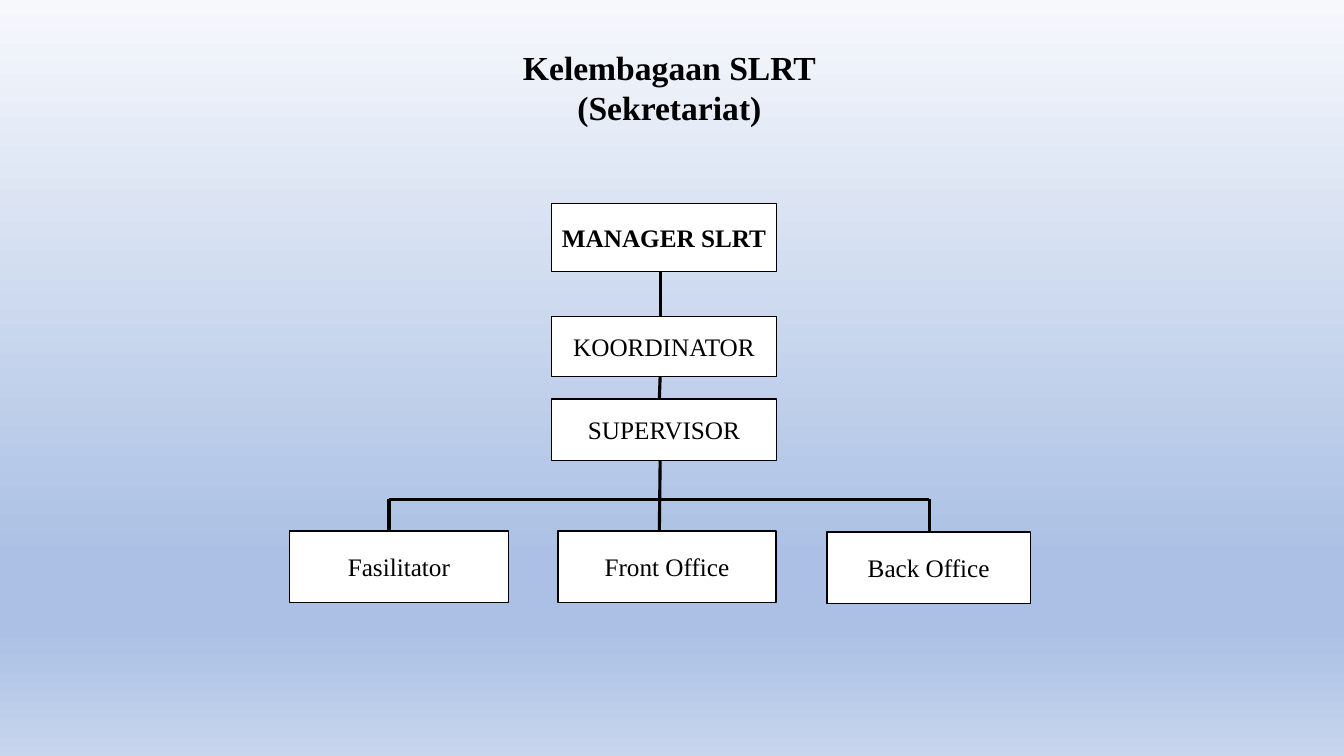
from copy import deepcopy
from dataclasses import dataclass

from lxml import etree
from pptx import Presentation
from pptx.dml.color import RGBColor
from pptx.enum.shapes import MSO_CONNECTOR, MSO_SHAPE
from pptx.enum.text import MSO_ANCHOR, MSO_AUTO_SIZE, PP_ALIGN
from pptx.oxml.ns import qn
from pptx.util import Inches, Pt

RECT = MSO_SHAPE.RECTANGLE
LINE = MSO_CONNECTOR.STRAIGHT
MIDDLE = MSO_ANCHOR.MIDDLE
CENTER = PP_ALIGN.CENTER
FIXED = MSO_AUTO_SIZE.NONE


@dataclass(frozen=True)
class Theme:
    font: str = "Times New Roman"
    ink: str = "000000"
    paper: str = "FFFFFF"
    sky: tuple = ((0, "F6F8FC"), (0.74, "ABC0E4"), (0.83, "ABC0E4"), (1, "C7D5ED"))
    head: int = 24
    body: int = 18
    edge: float = 1
    link: float = 2.25


def rgb(code):
    return RGBColor.from_string(code)


class Chart:
    def __init__(self, deck, theme):
        self.theme = theme
        self.wide, self.high = deck.slide_width, deck.slide_height
        self.slide = deck.slides.add_slide(deck.slide_layouts[5])

    def place(self, left, top, width, height):
        return (int(self.wide * left / 100), int(self.high * top / 100),
                int(self.wide * width / 100), int(self.high * height / 100))

    def back(self):
        fill = self.slide.background.fill
        fill.gradient()
        fill.gradient_angle = 270
        stops = self.slide.element.xpath(".//a:gsLst")[0]
        for _ in self.theme.sky[2:]:
            stops.append(deepcopy(stops[0]))
        for stop, (spot, code) in zip(fill.gradient_stops, self.theme.sky):
            stop.position = spot
            stop.color.rgb = rgb(code)

    def label(self, frame, lines, size, bold):
        frame.text = "\n".join(lines)
        frame.word_wrap = True
        frame.auto_size = FIXED
        frame.vertical_anchor = MIDDLE
        frame.margin_left = frame.margin_right = 0
        for para in frame.paragraphs:
            para.alignment = CENTER
            para.font.name = self.theme.font
            para.font.size = Pt(size)
            para.font.bold = bold
            para.font.color.rgb = rgb(self.theme.ink)

    def title(self, area, lines):
        shape = self.slide.shapes.title
        shape.left, shape.top, shape.width, shape.height = self.place(*area)
        self.label(shape.text_frame, lines, self.theme.head, True)

    def box(self, area, text, bold=False):
        shape = self.slide.shapes.add_shape(RECT, *self.place(*area))
        shape.shadow.inherit = False
        shape.fill.solid()
        shape.fill.fore_color.rgb = rgb(self.theme.paper)
        shape.line.color.rgb = rgb(self.theme.ink)
        shape.line.width = Pt(self.theme.edge)
        self.label(shape.text_frame, [text], self.theme.body, bold)

    def line(self, *ends):
        wire = self.slide.shapes.add_connector(LINE, *self.place(*ends))
        wire.line.color.rgb = rgb(self.theme.ink)
        wire.line.width = Pt(self.theme.link)
        etree.SubElement(wire.element.spPr, qn("a:effectLst"))


def main():
    deck = Presentation()
    deck.slide_width, deck.slide_height = Inches(13.33), Inches(7.5)
    chart = Chart(deck, Theme())
    chart.back()
    chart.title((35.86, 4.13, 27.9, 14.8), ["Kelembagaan SLRT", "(Sekretariat)"])

    stem, tip, bar, foot = 49.12, 49.06, 66.1, 70.25
    left, right = 28.95, 69.15
    chart.line(stem, 36, stem, 41.8)
    for top, end in ((49.7, 52.8), (60.8, foot)):
        chart.line(stem, top, tip, end)
    chart.line(left, bar, right, bar)
    for side in (left, right):
        chart.line(side, foot, side, bar - 0.1)

    ranks = (("MANAGER SLRT", 26.95, 8.95, True),
             ("KOORDINATOR", 41.9, 7.9, False),
             ("SUPERVISOR", 52.8, 8.1, False))
    for name, top, height, bold in ranks:
        chart.box((41.03, top, 16.75, height), name, bold)

    staff = (("Fasilitator", foot, 16.3),
             ("Front Office", foot, 16.2),
             ("Back Office", 70.4, 15.15))
    for col, (name, top, width) in enumerate(staff):
        chart.box((21.53 + 20 * col, top, width, 9.45), name)

    deck.save("out.pptx")


if __name__ == "__main__":
    main()
